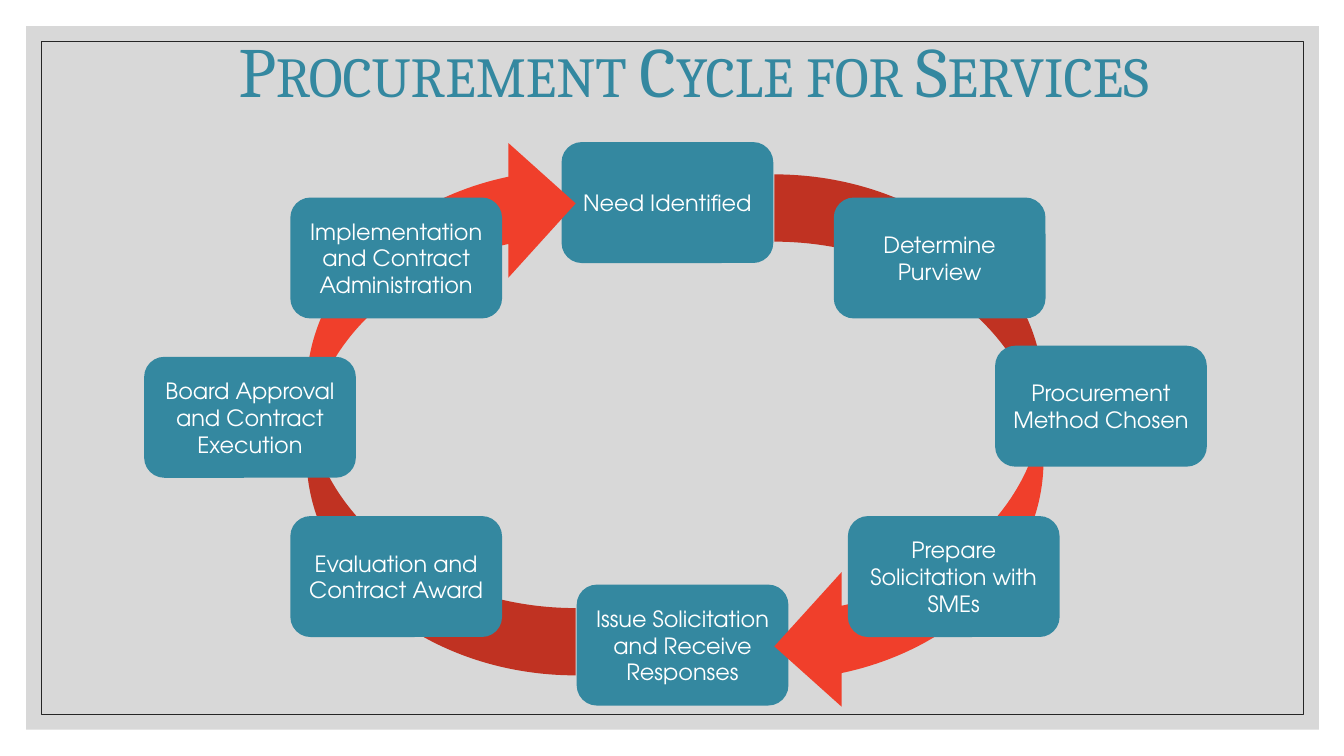
from lxml import etree
from pptx import Presentation
from pptx.dml.color import RGBColor
from pptx.enum.shapes import MSO_SHAPE
from pptx.enum.text import MSO_ANCHOR, MSO_AUTO_SIZE, PP_ALIGN
from pptx.oxml.ns import qn
from pptx.util import Emu, Pt

PX = 9144
TITLE_ONLY = 5
RECTANGLE = MSO_SHAPE.RECTANGLE
ROUNDED = MSO_SHAPE.ROUNDED_RECTANGLE
CURVED_ARROW = MSO_SHAPE.CURVED_LEFT_ARROW
CENTER = PP_ALIGN.CENTER
MIDDLE = MSO_ANCHOR.MIDDLE
NO_AUTOFIT = MSO_AUTO_SIZE.NONE

COLORS = {
    "panel": "BFBFBF",
    "border": "262626",
    "teal": "3488A0",
    "red": "F03F2B",
    "white": "FFFFFF",
}
STEP_SIZE = (210, 120)
ARROW_SIZE = (267, 535)
STEPS_BEHIND = [
    ("Issue Solicitation and Receive Responses", 429, 439),
    ("Need Identified", 414, 0),
]
ARROWS = [(161, -6, 180), (625, 32, 0)]
STEPS_IN_FRONT = [
    ("Determine Purview", 684, 55),
    ("Procurement\nMethod Chosen", 844, 202),
    ("Prepare Solicitation with SMEs", 698, 371),
    ("Board Approval and Contract Execution", 0, 213),
    ("Evaluation and Contract Award", 145, 371),
    ("Implementation and Contract Administration", 145, 55),
]


def color(name):
    """Return the named colour."""
    return RGBColor.from_string(COLORS[name])


def add_box(page, kind, box, fill=None, line=None):
    """Add a flat preset shape at box, given in px."""
    shape = page.shapes.add_shape(kind, *(Emu(n * PX) for n in box))
    shape.shadow.inherit = False
    if fill:
        shape.fill.solid()
        shape.fill.fore_color.rgb = color(fill)
    else:
        shape.fill.background()
    if line:
        shape.line.color.rgb = color(line)
        shape.line.width = Pt(0.5)
    else:
        shape.line.fill.background()
    return shape


def write_text(shape, text, font, size, ink, spacing=1.0, small_caps=False):
    """Write centred text, one paragraph for each line."""
    frame = shape.text_frame
    frame.word_wrap = True
    frame.auto_size = NO_AUTOFIT
    frame.vertical_anchor = MIDDLE
    frame.text = text
    for para in frame.paragraphs:
        para.alignment = CENTER
        para.line_spacing = spacing
        for span in para.runs:
            span.font.name = font
            span.font.size = Pt(size)
            span.font.color.rgb = color(ink)
            if small_caps:
                span.font._element.set("cap", "small")


def draw_frame(page, box):
    """Draw the translucent panel and the thin border inside it."""
    left, top, width, height = box
    panel = add_box(page, RECTANGLE, box, fill="panel")
    tint = panel._element.spPr.find(".//" + qn("a:srgbClr"))
    etree.SubElement(tint, qn("a:alpha")).set("val", "60000")
    inset = 15
    inner = (left + inset, top + inset, width - 2 * inset, height - 2 * inset)
    add_box(page, RECTANGLE, inner, line="border")


def draw_title(page, box):
    """Place the title placeholder in front of the frame."""
    title = page.shapes.title
    page.shapes._spTree.append(title._element)
    title.left, title.top, title.width, title.height = (Emu(n * PX) for n in box)
    write_text(title, "Procurement Cycle for Services", "Cambria", 50.4, "teal",
               spacing=0.9, small_caps=True)


def draw_steps(page, origin, steps):
    """Draw the labelled steps at their offsets from origin."""
    left, top = origin
    for label, across, down in steps:
        step = add_box(page, ROUNDED, (left + across, top + down, *STEP_SIZE), fill="teal")
        write_text(step, label, "TeX Gyre Adventor", 16, "white")


def draw_cycle(page, origin):
    """Draw the ring of steps with its two curved arrows."""
    left, top = origin
    draw_steps(page, origin, STEPS_BEHIND)
    for across, down, turn in ARROWS:
        arrow = add_box(page, CURVED_ARROW, (left + across, top + down, *ARROW_SIZE), fill="red")
        arrow.rotation = turn
    draw_steps(page, origin, STEPS_IN_FRONT)


def main():
    """Build the deck and save it."""
    deck = Presentation()
    deck.slide_width, deck.slide_height = Emu(1333 * PX), Emu(750 * PX)
    page = deck.slides.add_slide(deck.slide_layouts[TITLE_ONLY])
    draw_frame(page, (26, 26, 1282, 698))
    draw_title(page, (58, 32, 1260, 84))
    draw_cycle(page, (143, 141))
    deck.save("out.pptx")


if __name__ == "__main__":
    main()
